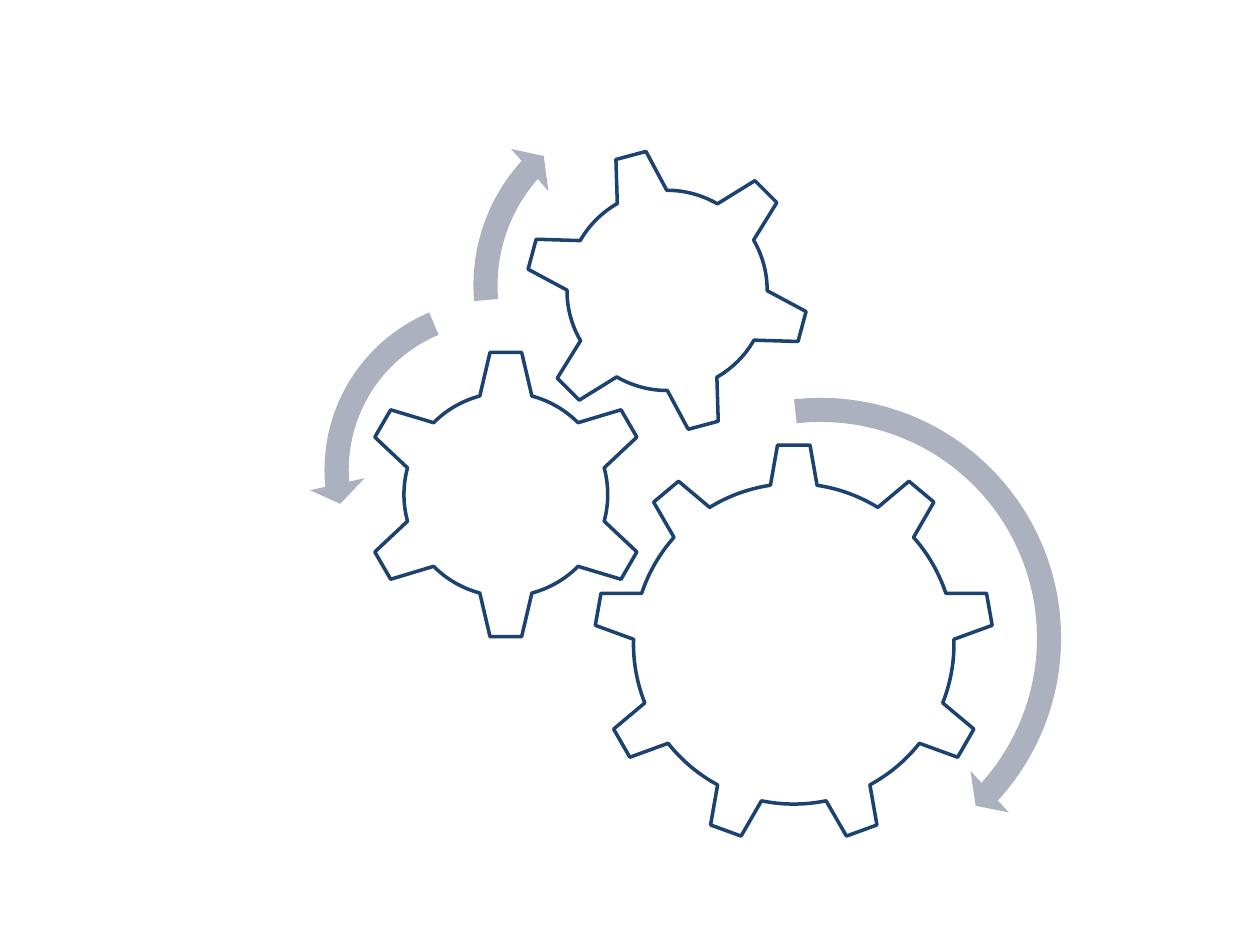
from dataclasses import dataclass

from pptx import Presentation
from pptx.dml.color import RGBColor
from pptx.enum.shapes import MSO_SHAPE as Shape
from pptx.util import Inches, Pt


@dataclass(frozen=True)
class Theme:
    gear_fill: RGBColor = RGBColor.from_string("FFFFFF")
    gear_outline: RGBColor = RGBColor.from_string("1C4271")
    arrow_fill: RGBColor = RGBColor.from_string("ACB1BF")
    outline_width: Pt = Pt(2)


class GearDiagram:
    """Draws gears and rotation arrows in one group on a slide."""

    def __init__(self, slide, theme):
        self.theme = theme
        self.slide = slide
        self.group = slide.shapes.add_group_shape()

    def _square_shape(self, kind, left, top, size, fill):
        figure = self.group.shapes.add_shape(
            kind, Inches(left), Inches(top), Inches(size), Inches(size))
        figure.shadow.inherit = False
        figure.fill.solid()
        figure.fill.fore_color.rgb = fill
        return figure

    def gear(self, kind, left, top, size, rotation=0):
        gear = self._square_shape(kind, left, top, size, self.theme.gear_fill)
        gear.line.color.rgb = self.theme.gear_outline
        gear.line.width = self.theme.outline_width
        gear.rotation = rotation

    def rotation_arrow(self, kind, left, top, size, adjustments):
        arrow = self._square_shape(kind, left, top, size, self.theme.arrow_fill)
        arrow.line.fill.background()
        for index, value in enumerate(adjustments):
            arrow.adjustments[index] = value


def main():
    prs = Presentation()
    prs.slide_width, prs.slide_height = Inches(10), Inches(7.5)
    slide = prs.slides.add_slide(prs.slide_layouts[6])
    diagram = GearDiagram(slide, Theme())

    # Gears: large, left and tilted top
    diagram.gear(Shape.GEAR_9, 4.71, 3.52, 3.18)
    diagram.gear(Shape.GEAR_6, 2.86, 2.77, 2.31)
    diagram.gear(Shape.GEAR_6, 4.16, 1.17, 2.27, rotation=345)

    # Arrows: band width, head angle, end angle, start angle, head width
    diagram.rotation_arrow(Shape.CIRCULAR_ARROW, 4.48, 3.03, 4.07,
                           (0.047, 2.99, 25.373, 158.165, 0.055))
    diagram.rotation_arrow(Shape.LEFT_CIRCULAR_ARROW, 2.45, 2.25, 2.96,
                           (0.065, 4.3, 104.891, 148.378, 0.075))
    diagram.rotation_arrow(Shape.CIRCULAR_ARROW, 3.63, 0.67, 3.19,
                           (0.06, 3.941, 133.138, 105.082, 0.07))

    prs.save("out.pptx")


if __name__ == "__main__":
    main()
